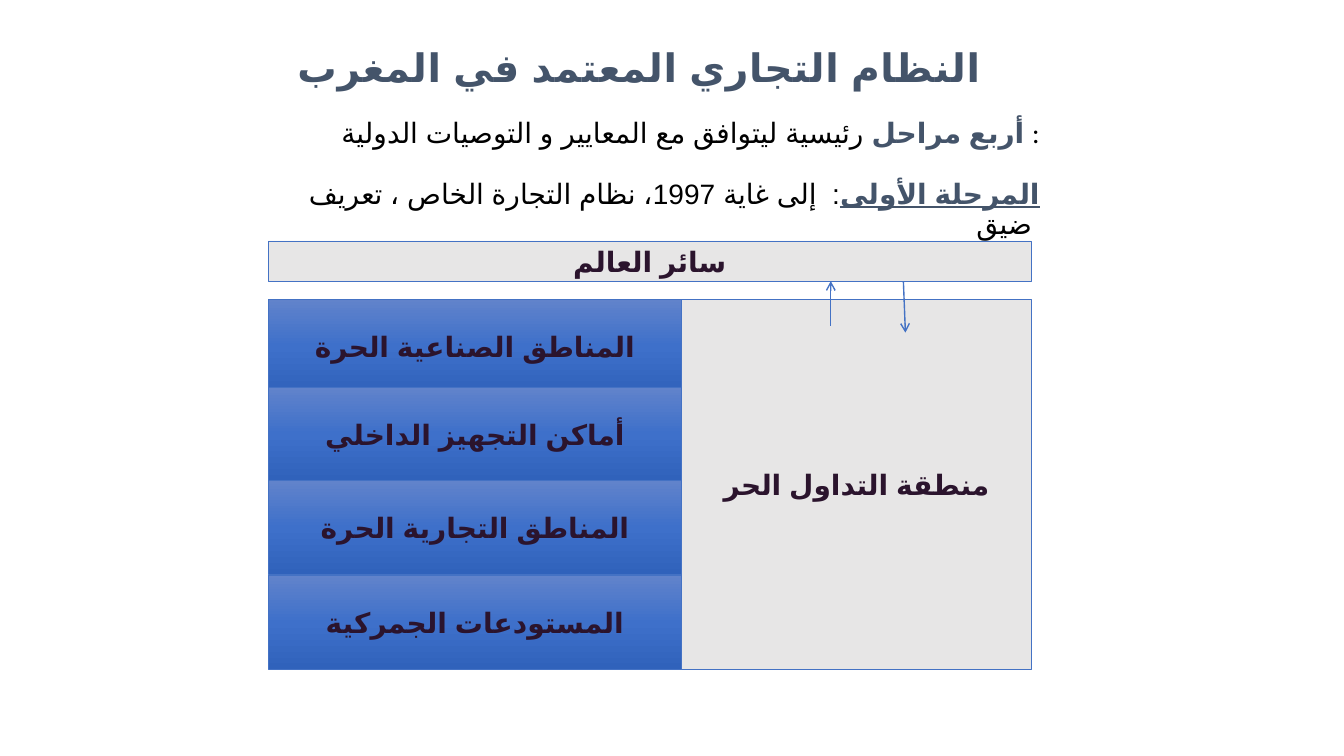
from lxml import etree
from pptx import Presentation
from pptx import util as u
from pptx.dml.color import RGBColor
from pptx.enum import shapes, text
from pptx.oxml import ns

SLATE = RGBColor(0x44, 0x54, 0x6A)
BLACK = RGBColor(0x00, 0x00, 0x00)
PLUM = RGBColor(0x2B, 0x14, 0x2D)
GREY = RGBColor(0xE7, 0xE6, 0xE6)
BLUE = RGBColor(0x44, 0x72, 0xC4)
BLUE_SHADES = [(0, "6183CB"), (50, "3E70CA"), (100, "3062BB")]

TITLE = "النظام التجاري المعتمد في المغرب"
# Each paragraph is a list of (text, emphasised, underlined)
INTRO = [
    [("أربع مراحل ", True, False),
     ("رئيسية ليتوافق مع المعايير و التوصيات الدولية :", False, False)],
    [("المرحلة الأولى", True, True),
     (":  إلى غاية 1997، نظام التجارة الخاص ، تعريف ضيق ", False, False)],
]
WORLD = "سائر العالم"
FREE_CIRCULATION = "منطقة التداول الحر"
ZONES = [  # label, top
    ("المناطق الصناعية الحرة", 2.97),
    ("أماكن التجهيز الداخلي", 3.84),
    ("المناطق التجارية الحرة", 4.77),
    ("المستودعات الجمركية", 5.71),
]
ARROWS = [((8.96, 2.79), (8.98, 3.3)), ((8.24, 3.23), (8.24, 2.79))]

LEFT, ZONE_WIDTH, CIRCULATION_WIDTH = 2.66, 4.1, 3.47
ZONE_HEIGHT = 0.93
WORLD_TOP, WORLD_HEIGHT = 2.39, 0.4


def place(shape, left, top, width, height):
    shape.left, shape.top = u.Inches(left), u.Inches(top)
    shape.width, shape.height = u.Inches(width), u.Inches(height)


def add_span(para, words, size, color, bold, latin="Calibri"):
    """Add a run of Arabic text with its Latin and complex-script fonts."""
    span = para.add_run()
    span.text = words
    font = span.font
    font.size, font.bold, font.color.rgb = u.Pt(size), bold, color
    font.name = latin
    properties = span._r.get_or_add_rPr()
    properties.set("lang", "ar-MA")
    etree.SubElement(properties, ns.qn("a:cs"), typeface="Arial")
    return span


def shade(box):
    """Fill a box with the vertical blue gradient."""
    box.fill.gradient()
    box.fill.gradient_angle = 270
    stops = box._element.spPr.find(ns.qn("a:gradFill")).find(ns.qn("a:gsLst"))
    for stop in list(stops):
        stops.remove(stop)
    for position, color in BLUE_SHADES:
        stop = etree.SubElement(stops, ns.qn("a:gs"), pos=str(position * 1000))
        etree.SubElement(stop, ns.qn("a:srgbClr"), val=color)


def add_box(group, label, left, top, width, height, shaded=False):
    box = group.shapes.add_shape(
        shapes.MSO_SHAPE.RECTANGLE, *map(u.Inches, (left, top, width, height)))
    box.shadow.inherit = False
    if shaded:
        shade(box)
    else:
        box.fill.solid()
        box.fill.fore_color.rgb = GREY
    box.line.color.rgb, box.line.width = BLUE, u.Pt(0.5)
    frame = box.text_frame
    frame.vertical_anchor = text.MSO_ANCHOR.MIDDLE
    frame.word_wrap = True
    para = frame.paragraphs[0]
    para.alignment = text.PP_ALIGN.CENTER
    add_span(para, label, 20, PLUM, True)


def add_title(slide):
    title = slide.shapes.title
    place(title, 2.21, 0.24, 8.26, 0.91)
    title.text_frame.vertical_anchor = text.MSO_ANCHOR.MIDDLE
    para = title.text_frame.paragraphs[0]
    para.alignment, para.line_spacing = text.PP_ALIGN.CENTER, 0.9
    span = add_span(para, TITLE, 28, SLATE, True, "Cambria")
    span._r.get_or_add_rPr().set("spc", "50")


def add_intro(slide):
    box = slide.shapes.add_textbox(*map(u.Inches, (2.47, 1.13, 7.94, 1.31)))
    frame = box.text_frame
    frame.word_wrap = True
    for index, spans in enumerate(INTRO):
        para = frame.add_paragraph() if index else frame.paragraphs[0]
        para.alignment, para.line_spacing = text.PP_ALIGN.RIGHT, 0.9
        para.space_before = u.Pt(22 if index else 0)
        for words, emphasised, underlined in spans:
            span = add_span(
                para, words, 20, SLATE if emphasised else BLACK, emphasised)
            span.font.underline = underlined


def add_arrow(slide, start, end):
    arrow = slide.shapes.add_connector(
        shapes.MSO_CONNECTOR.STRAIGHT, *map(u.Inches, start + end))
    arrow.line.color.rgb, arrow.line.width = BLUE, u.Pt(1)
    etree.SubElement(arrow.line._get_or_add_ln(), ns.qn("a:tailEnd"), type="arrow")
    etree.SubElement(arrow._element.spPr, ns.qn("a:effectLst"))


def main():
    deck = Presentation()
    deck.slide_width, deck.slide_height = u.Inches(13.33), u.Inches(7.5)
    slide = deck.slides.add_slide(deck.slide_layouts[5])
    add_title(slide)
    add_intro(slide)

    diagram = slide.shapes.add_group_shape()
    for label, top in ZONES:
        add_box(diagram, label, LEFT, top, ZONE_WIDTH, ZONE_HEIGHT, shaded=True)
    zones_top = ZONES[0][1]
    zones_height = ZONES[-1][1] + ZONE_HEIGHT - zones_top
    add_box(diagram, FREE_CIRCULATION, LEFT + ZONE_WIDTH, zones_top,
            CIRCULATION_WIDTH, zones_height)
    add_box(diagram, WORLD, LEFT, WORLD_TOP,
            ZONE_WIDTH + CIRCULATION_WIDTH, WORLD_HEIGHT)
    for start, end in ARROWS:
        add_arrow(slide, start, end)
    deck.save("out.pptx")


if __name__ == "__main__":
    main()
